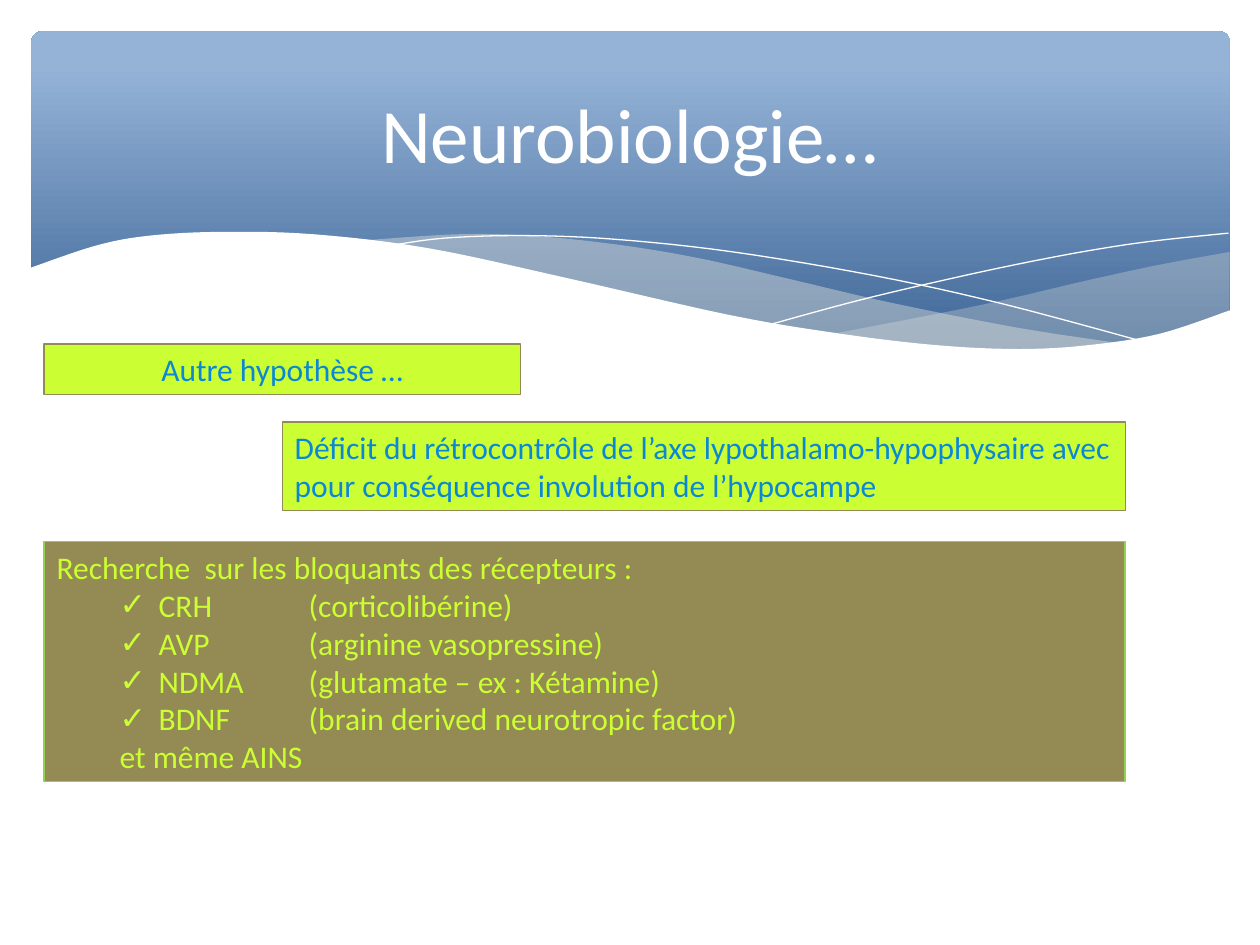
from lxml import etree
from pptx import Presentation
from pptx import util as u
from pptx.dml.color import RGBColor
from pptx.enum import shapes, text
from pptx.oxml import ns

COLORS = {"navy": "376092", "sky": "95B3D7", "cream": "EEECE1", "white": "FFFFFF",
          "lime": "CCFF33", "olive": "948A54", "green": "92D050", "blue": "0B87D6"}
COLS, ROWS = 100, 75
CENTER, LEFT = text.PP_ALIGN.CENTER, text.PP_ALIGN.LEFT


def rgb(name):
    return RGBColor.from_string(COLORS[name])


def write(p, content, size=18, color="blue", align=LEFT, indent=0, hanging=0, bullet=None):
    """Fill one paragraph; indent and hanging are in inches."""
    p.alignment = align
    p.space_before = p.space_after = u.Pt(0)
    r = p.add_run()
    r.text = content
    r.font.size, r.font.name = u.Pt(size), "Calibri"
    r.font.color.rgb = rgb(color)
    pPr = p._p.get_or_add_pPr()
    pPr.set("marL", str(u.Inches(indent)))
    pPr.set("indent", str(-u.Inches(hanging)))
    pPr.set("defTabSz", str(u.Inches(1)))
    if bullet:
        clr = etree.SubElement(pPr, ns.qn("a:buClr"))
        etree.SubElement(clr, ns.qn("a:srgbClr"), val=COLORS[color])
        etree.SubElement(pPr, ns.qn("a:buChar"), char=bullet)
    else:
        etree.SubElement(pPr, ns.qn("a:buNone"))


def smooth(knots, steps=6):
    """Points of a Catmull-Rom curve through the knots."""
    ends = [knots[0], *knots, knots[-1]]
    points = [knots[0]]
    for a, b, c, d in zip(ends, ends[1:], ends[2:], ends[3:]):
        for t in (i / steps for i in range(1, steps + 1)):
            points.append(tuple(
                (2 * q + (r - p) * t + (2 * p - 5 * q + 4 * r - v) * t ** 2
                 + (3 * q - p - 3 * r + v) * t ** 3) / 2
                for p, q, r, v in zip(a, b, c, d)))
    return points


class Deck:
    """Slide on a grid of 100 columns by 75 rows."""

    def __init__(self, prs):
        self.prs = prs
        self.cw, self.rh = prs.slide_width / COLS, prs.slide_height / ROWS
        self.s = prs.slides.add_slide(prs.slide_layouts[1])

    def at(self, x, y):
        return round(x * self.cw), round(y * self.rh)

    def paint(self, sp, fill=None, line=None, alpha=None):
        if fill:
            sp.fill.solid()
            sp.fill.fore_color.rgb = rgb(fill)
        else:
            sp.fill.background()
        if alpha:
            clr = sp.fill._xPr.find(".//" + ns.qn("a:srgbClr"))
            etree.SubElement(clr, ns.qn("a:alpha"), val=str(alpha * 1000))
        if line:
            sp.line.color.rgb = rgb(line)
            sp.line.width = u.Pt(0.75)
        else:
            sp.line.fill.background()

    def banner(self, x, y, w, h):
        sp = self.s.shapes.add_shape(shapes.MSO_SHAPE.ROUNDED_RECTANGLE,
                                     *self.at(x, y), *self.at(w, h))
        sp.adjustments[0] = 0.03
        sp.shadow.inherit = False
        sp.line.fill.background()
        sp.fill.gradient()
        sp.fill.gradient_angle = 90
        for stop, name, pos in zip(sp.fill.gradient_stops, ("navy", "sky"), (0, 0.9)):
            stop.color.rgb, stop.position = rgb(name), pos

    def outline(self, points, closed=True, **style):
        first, *rest = [self.at(*pt) for pt in points]
        fb = self.s.shapes.build_freeform(*first)
        fb.add_line_segments(rest, close=closed)
        sp = fb.convert_to_shape()
        sp.shadow.inherit = False
        self.paint(sp, **style)

    def frame(self, sp, anchor):
        tf = sp.text_frame
        tf.word_wrap, tf.auto_size = True, text.MSO_AUTO_SIZE.NONE
        tf.vertical_anchor = anchor
        tf.margin_left = tf.margin_right = u.Inches(0.1)
        tf.margin_top = tf.margin_bottom = u.Inches(0.05)
        return tf

    def placeholder(self, idx, x, y, w, h, anchor=text.MSO_ANCHOR.TOP):
        sp = self.s.placeholders[idx]
        sp.left, sp.top = self.at(x, y)
        sp.width, sp.height = self.at(w, h)
        self.s.shapes._spTree.append(sp._element)  # bring to front
        return sp, self.frame(sp, anchor)

    def title(self, content, *place):
        _, tf = self.placeholder(0, *place, anchor=text.MSO_ANCHOR.MIDDLE)
        write(tf.paragraphs[0], content, size=44, color="white", align=CENTER)

    def note(self, content, *place, align=LEFT):
        x, y, w, h = place
        sp = self.s.shapes.add_shape(shapes.MSO_SHAPE.RECTANGLE,
                                     *self.at(x, y), *self.at(w, h))
        sp.shadow.inherit = False
        self.paint(sp, fill="lime", line="olive")
        tf = self.frame(sp, text.MSO_ANCHOR.TOP)
        write(tf.paragraphs[0], content, align=align)

    def checklist(self, heading, items, closing, *place):
        sp, tf = self.placeholder(1, *place)
        self.paint(sp, fill="olive", line="green")
        write(tf.paragraphs[0], heading, color="lime")
        for name, meaning in items:
            p = tf.add_paragraph()
            p.level = 1
            write(p, f"{name}\t({meaning})", color="lime",
                  indent=0.81, hanging=0.31, bullet="✓")
        write(tf.add_paragraph(), closing, color="lime", indent=0.5)


def main():
    prs = Presentation()
    prs.slide_width, prs.slide_height = u.Inches(10), u.Inches(7.5)
    deck = Deck(prs)

    # Banner with translucent waves
    deck.banner(2.5, 2.5, 95.1, 27)
    deck.outline(smooth([(97.6, 20), (92.1, 21), (86.1, 22.3), (77.9, 24.2), (66.1, 26.5)])
                 + smooth([(66.1, 26.5), (71.9, 27.2), (78.1, 27.7), (83.5, 27.7),
                           (88.9, 27.2), (93.5, 26.1), (97.6, 24.7)]),
                 fill="cream", alpha=29)
    deck.outline(smooth([(89.3, 27.3), (80.7, 26), (70.6, 24), (62.9, 22.2), (55.5, 20.5),
                         (48.9, 19.4), (42, 18.7), (36.1, 18.6), (28.6, 19.1)])
                 + smooth([(28.6, 19.1), (36.2, 20.3), (44.9, 22.2), (56.6, 24.8),
                           (66.5, 26.6), (74.8, 27.6), (81.8, 27.8), (89.3, 27.3)]),
                 fill="cream", alpha=40)

    # Thin white curves
    deck.outline(smooth([(30.9, 19.5), (35.3, 18.9), (41.6, 18.7), (48.9, 19), (58.2, 20),
                         (69.5, 21.9), (79.5, 24.1), (90.7, 27.1)]),
                 closed=False, line="white")
    deck.outline(smooth([(61.3, 25.7), (69.5, 23.5), (80.6, 21), (89.5, 19.4), (97.5, 18.5)]),
                 closed=False, line="white")

    # White wave below the banner
    deck.outline(smooth([(97.7, 24.6), (92, 26.5), (86.3, 27.4), (80.9, 27.7), (74.4, 27.4),
                         (66.8, 26.5), (57.9, 25), (44.7, 22), (34, 19.7), (25, 18.6),
                         (17.7, 18.4), (11.9, 18.7), (7.6, 19.5), (2.3, 21.3)])
                 + [(2.3, 32.9), (97.7, 32.9)], fill="white")

    # Title and hypothesis
    deck.title("Neurobiologie…", 5, 3.7, 90, 13.7)
    deck.note("Autre hypothèse …", 3.5, 27.3, 37.8, 4, align=CENTER)
    deck.note("Déficit du rétrocontrôle de l’axe lypothalamo-hypophysaire avec "
              "pour conséquence involution de l’hypocampe", 22.4, 33.5, 66.9, 7)

    # Receptor blockers
    deck.checklist("Recherche  sur les bloquants des récepteurs :",
                   [("CRH", "corticolibérine"),
                    ("AVP", "arginine vasopressine"),
                    ("NDMA", "glutamate – ex : Kétamine"),
                    ("BDNF", "brain derived neurotropic factor")],
                   "et même AINS", 3.5, 43, 85.8, 19)
    prs.save("out.pptx")


if __name__ == "__main__":
    main()
